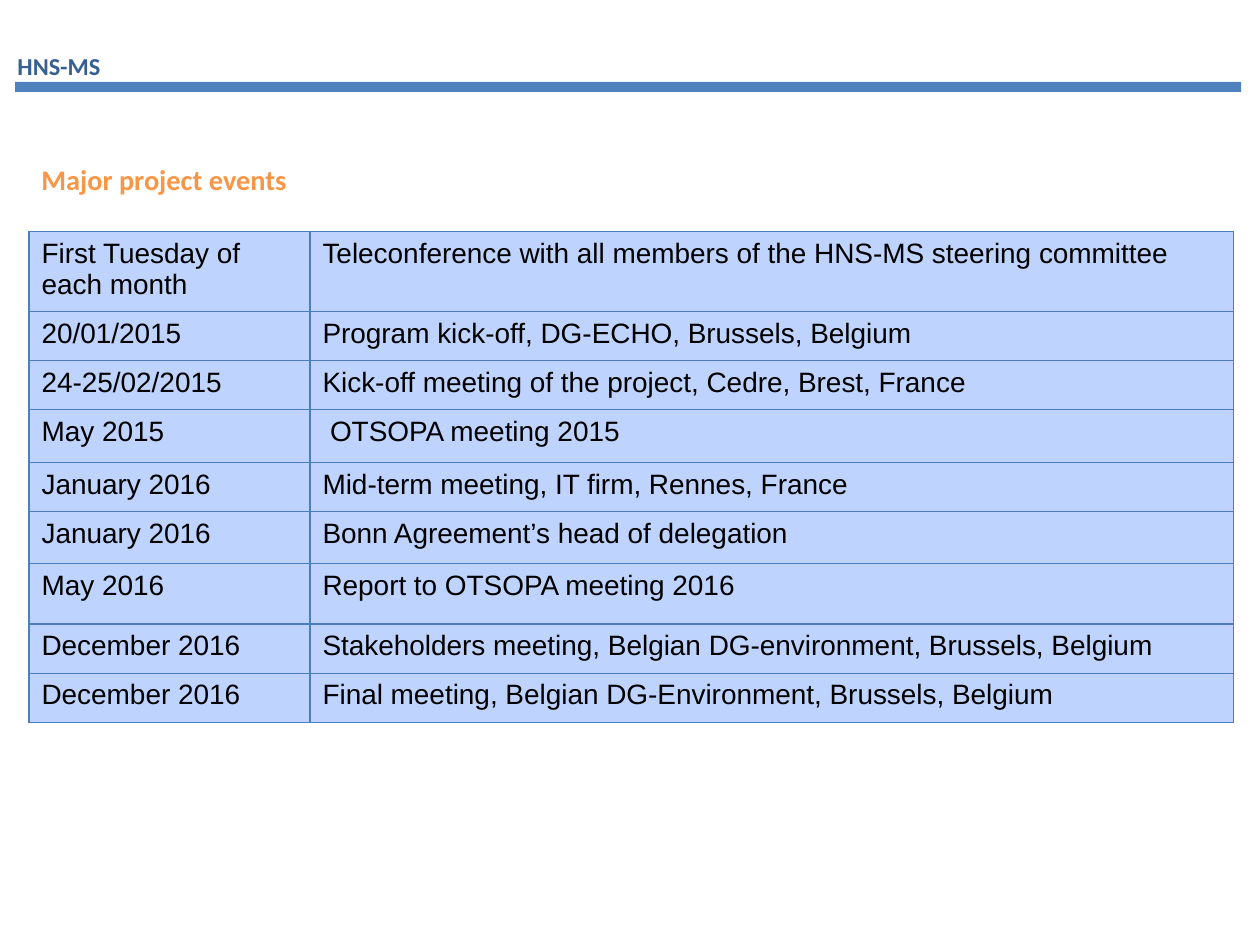
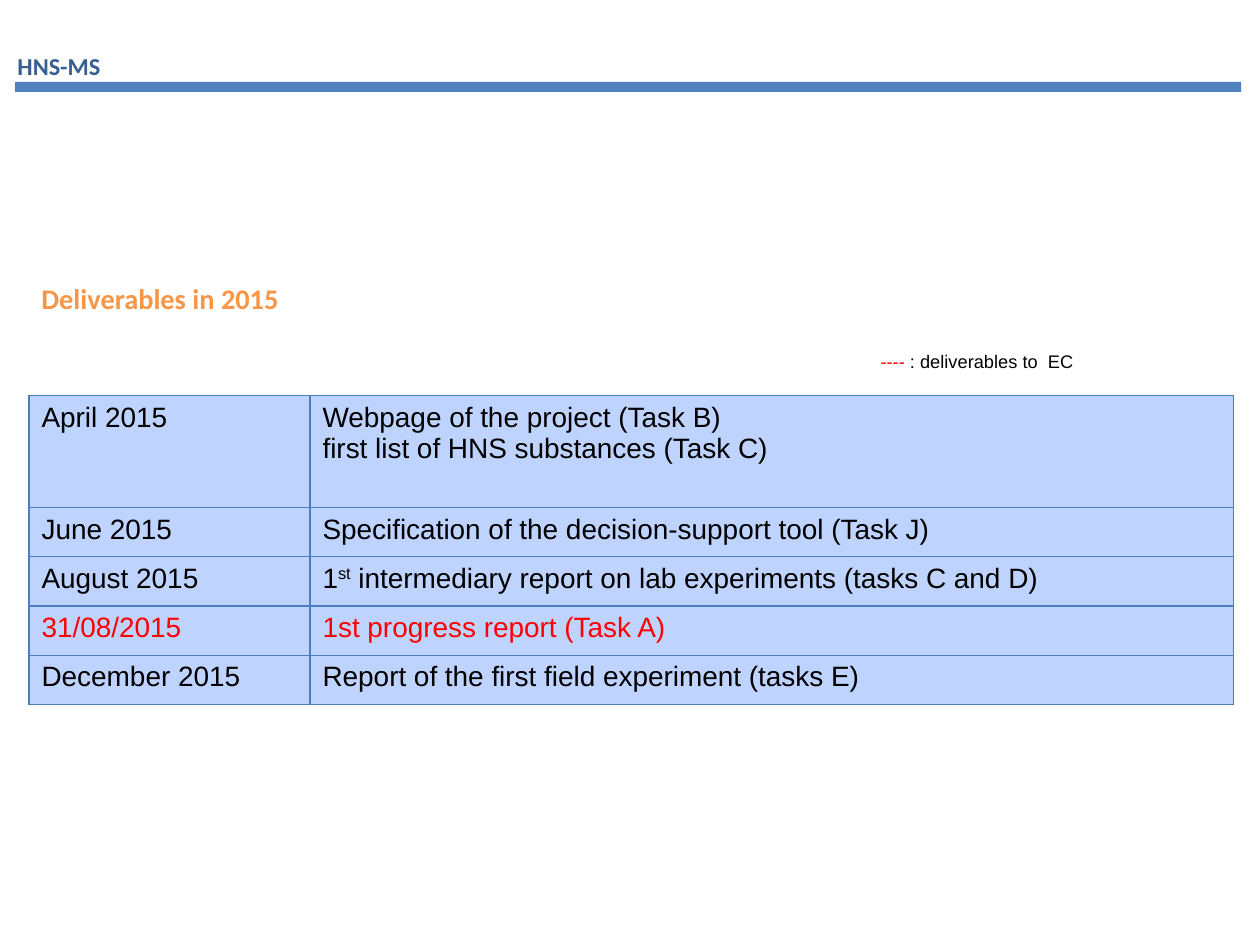
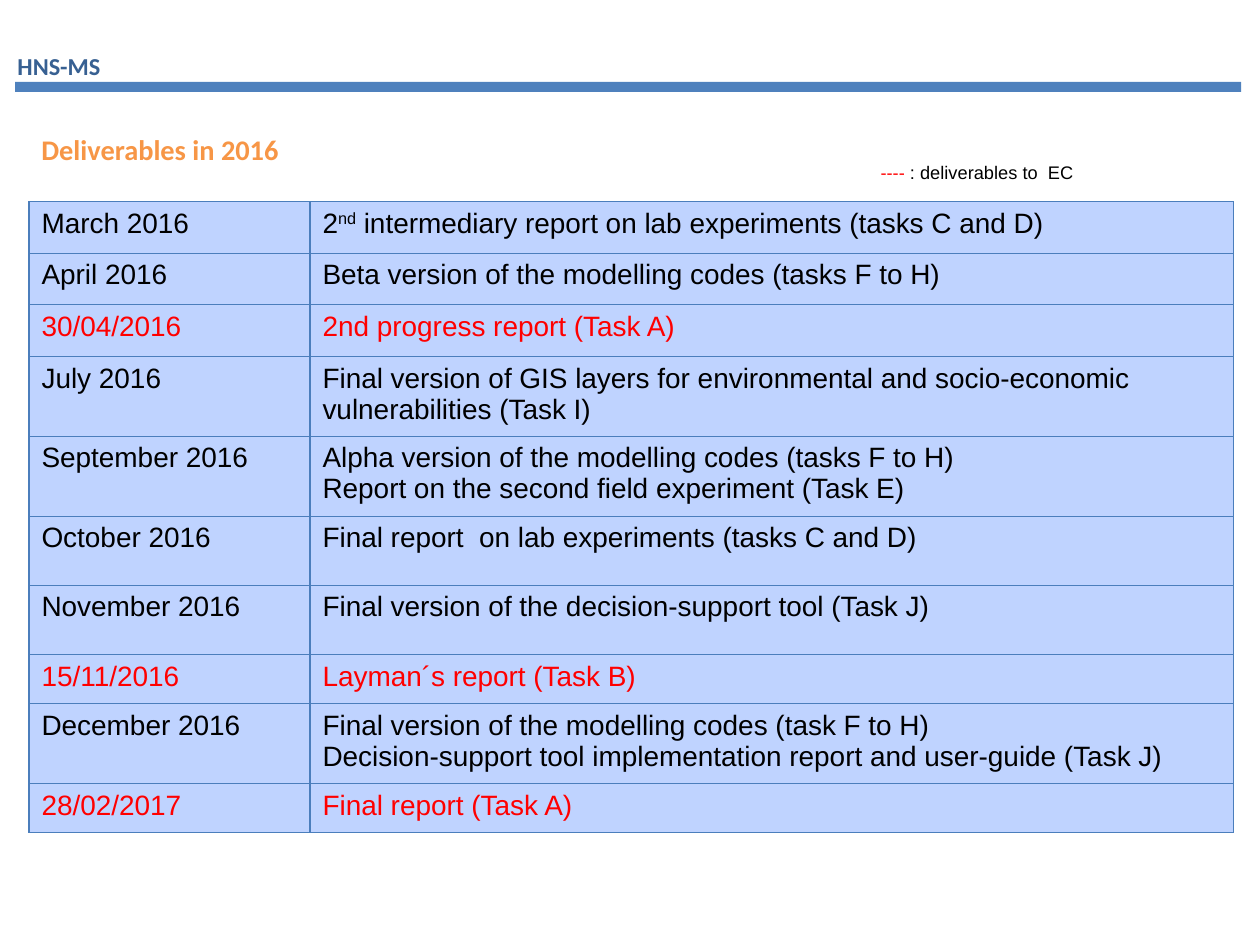
import pptx
import pptx.util
import pptx.dml.color
import pptx.enum.shapes
import pptx.enum.text
import pptx.oxml
import pptx.oxml.ns

HUE = {
    "bar": "4F81BD", "brand": "376092", "head": "F79646", "cell": "BFD3FF",
    "edge": "4B7EBC", "text": "000000", "due": "FF0000",
}
WIDE, HIGH = 10, 7.5
LEFT = 0.23
COLS = (2.23, 7.33)
INSET = 0.1
SUB, SUPER = "-25000", "30000"
KEY = [("----", "due"), (" : deliverables to  EC", "text")]

PAGES = [
    {
        "head": "Major project events", "size": (3.6, 0.57), "top": 0.98,
        "grid": 1.84,
        "rows": [
            (0.47, "First Tuesday of each month",
             "Teleconference with all members of the HNS-MS steering committee"),
            (0.39, "20/01/2015", "Program kick-off, DG-ECHO, Brussels, Belgium"),
            (0.39, "24-25/02/2015",
             "Kick-off meeting of the project, Cedre, Brest, France"),
            (0.42, "May 2015", "OTSOPA meeting 2015", "text", 0.06),
            (0.39, "January 2016", "Mid-term meeting, IT firm, Rennes, France"),
            (0.41, "January 2016", "Bonn Agreement’s head of delegation"),
            (0.48, "May 2016", "Report to OTSOPA meeting 2016"),
            (0.39, "December 2016",
             "Stakeholders meeting, Belgian DG-environment, Brussels, Belgium"),
            (0.39, "December 2016",
             "Final meeting, Belgian DG-Environment, Brussels, Belgium"),
        ],
    },
    {
        "head": "Deliverables in 2015", "size": (3.49, 0.57), "top": 1.92,
        "grid": 3.14, "key": (2.56, 3.11),
        "rows": [
            (0.89, "April 2015",
             "Webpage of the project (Task B)\nfirst list of HNS substances (Task C)"),
            (0.39, "June 2015", "Specification of the decision-support tool (Task J)"),
            (0.39, "August 2015",
             "1^st^ intermediary report on lab experiments (tasks C and D)"),
            (0.39, "31/08/2015", "1st progress report (Task A)", "due"),
            (0.39, "December 2015", "Report of the first field experiment (tasks E)"),
        ],
    },
    {
        "head": "Deliverables in 2016", "size": (3.49, 0.57), "top": 0.74,
        "grid": 1.6, "key": (1.06, 2.91),
        "rows": [
            (0.41, "March 2016",
             "2^nd^ intermediary report on lab experiments (tasks C and D)"),
            (0.41, "April 2016", "Beta version of the modelling codes (tasks F to H)"),
            (0.41, "30/04/2016", "2nd progress report (Task A)", "due"),
            (0.55, "July 2016",
             "Final version of GIS layers for environmental and socio-economic "
             "vulnerabilities (Task I)"),
            (0.55, "September 2016",
             "Alpha version of the modelling codes (tasks F to H)\n"
             "Report on the second field experiment (Task E)"),
            (0.55, "October 2016", "Final report  on lab experiments (tasks C and D)"),
            (0.55, "November 2016", "Final version of the decision-support tool (Task J)"),
            (0.39, "15/11/2016", "Layman´s report (Task B)", "due"),
            (0.39, "December 2016",
             "Final version of the modelling codes (task F to H)\n"
             "Decision-support tool implementation report and user-guide (Task J)"),
            (0.39, "28/02/2017", "Final report (Task A)", "due"),
        ],
    },
]


def inch(*vals):
    return [pptx.util.Inches(v) for v in vals]


def tint(name):
    return pptx.dml.color.RGBColor.from_string(HUE[name])


def style(run, face, size, hue, bold=False, base=None):
    run.font.name = face
    run.font.size = pptx.util.Pt(size)
    run.font.bold = bold
    run.font.color.rgb = tint(hue)
    if base:
        run._r.get_or_add_rPr().set("baseline", base)


def label(slide, box, parts, face, size, bold=False, wrap=False):
    frame = slide.shapes.add_textbox(*inch(*box)).text_frame
    frame.word_wrap = wrap
    frame.auto_size = pptx.enum.text.MSO_AUTO_SIZE.SHAPE_TO_FIT_TEXT
    for text, hue in parts:
        run = frame.paragraphs[0].add_run()
        run.text = text
        style(run, face, size, hue, bold, SUB)


def band(slide):
    bar = slide.shapes.add_shape(
        pptx.enum.shapes.MSO_SHAPE.RECTANGLE, *inch(0.12, 0.65, 9.73, 0.08))
    bar.shadow.inherit = False
    bar.fill.solid()
    bar.fill.fore_color.rgb = tint("bar")
    bar.line.fill.background()
    label(slide, (0.04, 0.13, 1.35, 0.5), [("HNS-MS", "brand")], "Calibri", 24, True)


def edge(cell):
    props = cell._tc.get_or_add_tcPr()
    for at, side in enumerate("LRTB"):
        props.insert(at, pptx.oxml.parse_xml(
            f'<a:ln{side} {pptx.oxml.ns.nsdecls("a")} w="{pptx.util.Pt(0.75)}">'
            f'<a:solidFill><a:srgbClr val="{HUE["edge"]}"/></a:solidFill></a:ln{side}>'))


def write(cell, text, hue, shift=0):
    cell.fill.solid()
    cell.fill.fore_color.rgb = tint("cell")
    edge(cell)
    cell.margin_left = pptx.util.Inches(INSET + shift)
    frame = cell.text_frame
    for at, line in enumerate(text.split("\n")):
        para = frame.add_paragraph() if at else frame.paragraphs[0]
        for nth, part in enumerate(line.split("^")):
            run = para.add_run()
            run.text = part
            style(run, "Arial", 16, hue, base=SUPER if nth % 2 else None)


def grid(slide, top, rows):
    high = sum(row[0] for row in rows)
    table = slide.shapes.add_table(
        len(rows), len(COLS), *inch(LEFT, top, sum(COLS), high)).table
    table.first_row = table.horz_banding = False
    for col, width in zip(table.columns, COLS):
        col.width = pptx.util.Inches(width)
    for line, (tall, date, event, *more) in zip(table.rows, rows):
        hue, shift = (more + ["text", 0][len(more):])
        line.height = pptx.util.Inches(tall)
        write(line.cells[0], date, hue)
        write(line.cells[1], event, hue, shift)


def main():
    deck = pptx.Presentation()
    deck.slide_width, deck.slide_height = inch(WIDE, HIGH)
    for page in PAGES:
        slide = deck.slides.add_slide(deck.slide_layouts[6])
        band(slide)
        grid(slide, page["grid"], page["rows"])
        label(slide, (LEFT, page["top"], *page["size"]),
              [(page["head"], "head")], "Calibri", 28, True)
        if "key" in page:
            top, width = page["key"]
            label(slide, (6.89, top, width, 0.4), KEY, "Arial", 18, wrap=True)
    deck.save("out.pptx")


if __name__ == "__main__":
    main()
